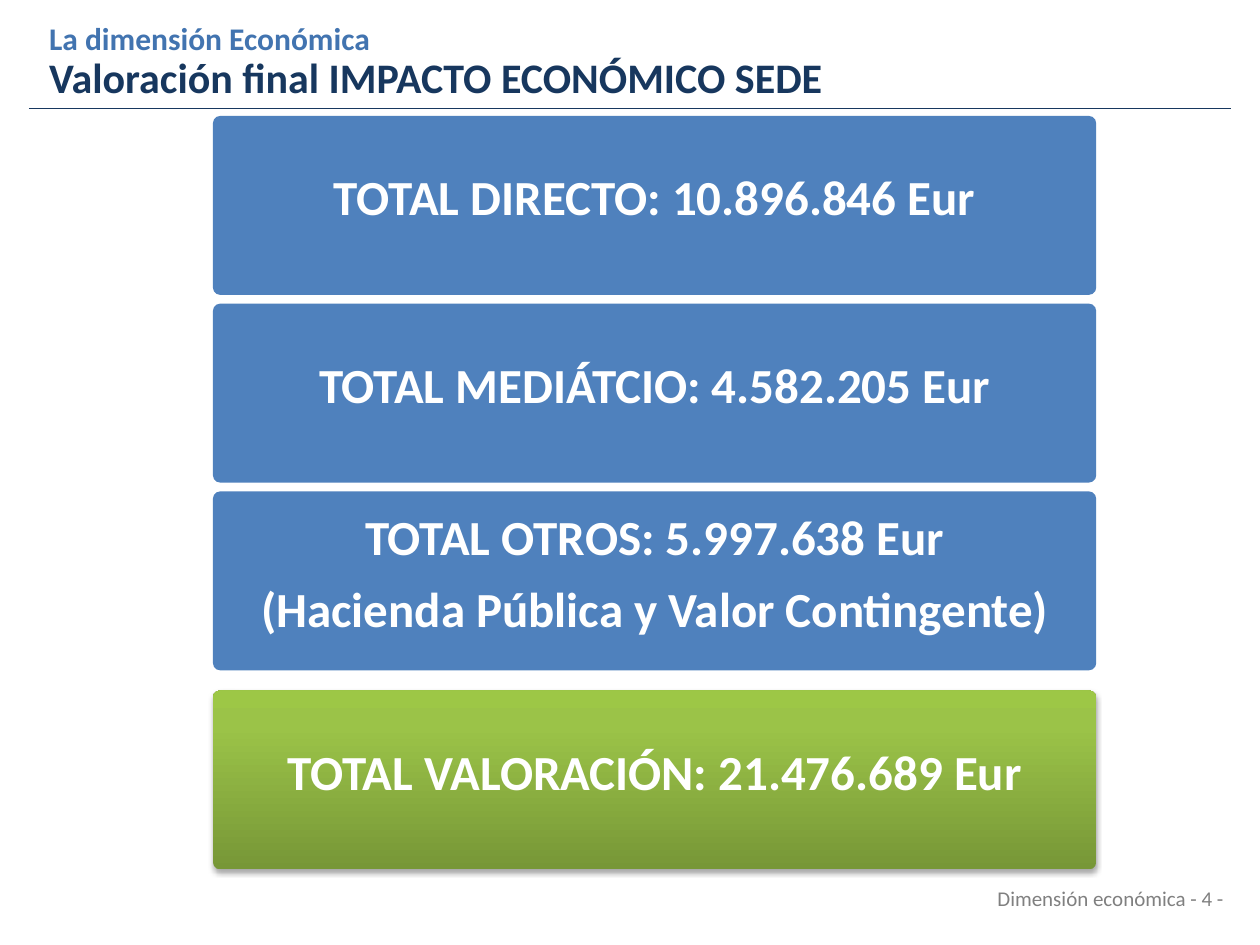
from dataclasses import dataclass

from lxml import etree
from pptx import Presentation
from pptx.dml.color import RGBColor
from pptx.enum import shapes, text
from pptx.oxml import ns
from pptx.util import Inches, Pt


@dataclass(frozen=True)
class Theme:
    font: str = "Calibri"
    blue: str = "4F81BD"
    subtitle: str = "4274B0"
    navy: str = "17375E"
    gray: str = "808080"
    white: str = "FFFFFF"
    shadow: str = "000000"
    green_stops: tuple = ((0, "779737"), (80, "9BC348"), (100, "9DC746"))
    subtitle_size: int = 18
    title_size: int = 24
    total_size: int = 28
    footer_size: int = 12


@dataclass(frozen=True)
class Total:
    lines: tuple[str, ...]
    is_final: bool = False


THEME = Theme()
TOTALS = (
    Total(("TOTAL DIRECTO: 10.896.846 Eur",)),
    Total(("TOTAL MEDIÁTCIO: 4.582.205 Eur",)),
    Total(("TOTAL OTROS: 5.997.638 Eur", "(Hacienda Pública y Valor Contingente)")),
    Total(("TOTAL VALORACIÓN: 21.476.689 Eur",), is_final=True),
)
BOX_LEFT, BOX_TOP, BOX_WIDTH, BOX_HEIGHT = 1.69, 0.92, 7.01, 1.42
BOX_PITCH, FINAL_GAP = 1.49, 0.09


def style_font(font, size: int, color: str, bold: bool = False) -> None:
    font.name = THEME.font
    font.size = Pt(size)
    font.bold = bold
    font.color.rgb = RGBColor.from_string(color)


def add_element(parent, tag: str, **attributes):
    values = {name: str(value) for name, value in attributes.items()}
    return etree.SubElement(parent, ns.qn(tag), values)


def add_gradient(shape) -> None:
    shape.fill.gradient()
    shape.fill.gradient_angle = 90
    stop_list = shape._element.spPr.find(".//" + ns.qn("a:gsLst"))
    for stop in list(stop_list):
        stop_list.remove(stop)
    for position, color in THEME.green_stops:
        stop = add_element(stop_list, "a:gs", pos=position * 1000)
        add_element(stop, "a:srgbClr", val=color)


def add_shadow(shape) -> None:
    effects = shape._element.spPr.find(ns.qn("a:effectLst"))
    shadow = add_element(effects, "a:outerShdw", blurRad=Pt(3.1), dist=Pt(1.8),
                         dir=90 * 60000, rotWithShape=0)
    color = add_element(shadow, "a:srgbClr", val=THEME.shadow)
    add_element(color, "a:alpha", val=35000)


def add_title(slide) -> None:
    title = slide.shapes.title
    title.left, title.top = Inches(0.39), Inches(0.18)
    title.width, title.height = Inches(9.06), Inches(0.64)
    frame = title.text_frame
    frame.margin_left = frame.margin_top = frame.margin_right = frame.margin_bottom = 0
    frame.vertical_anchor = text.MSO_ANCHOR.MIDDLE
    frame.auto_size = text.MSO_AUTO_SIZE.NONE
    paragraph = frame.paragraphs[0]
    paragraph.alignment = text.PP_ALIGN.LEFT
    paragraph.line_spacing = 0.9
    subtitle = paragraph.add_run()
    subtitle.text = "La dimensión Económica"
    style_font(subtitle.font, THEME.subtitle_size, THEME.subtitle, bold=True)
    paragraph.add_line_break()
    heading = paragraph.add_run()
    heading.text = "Valoración final IMPACTO ECONÓMICO SEDE"
    style_font(heading.font, THEME.title_size, THEME.navy, bold=True)


def add_rule(slide) -> None:
    rule = slide.shapes.add_connector(shapes.MSO_CONNECTOR.STRAIGHT, Inches(0.23),
                                      Inches(0.86), Inches(9.77), Inches(0.86))
    rule.line.color.rgb = RGBColor.from_string(THEME.navy)
    rule.line.width = Pt(0.75)
    add_element(rule._element.spPr, "a:effectLst")


def add_total(slide, total: Total, top: float) -> None:
    shape = slide.shapes.add_shape(shapes.MSO_SHAPE.ROUNDED_RECTANGLE, Inches(BOX_LEFT),
                                   Inches(top), Inches(BOX_WIDTH), Inches(BOX_HEIGHT))
    shape.adjustments[0] = 0.04
    shape.line.fill.background()
    shape.shadow.inherit = False
    if total.is_final:
        add_gradient(shape)
        add_shadow(shape)
    else:
        shape.fill.solid()
        shape.fill.fore_color.rgb = RGBColor.from_string(THEME.blue)
    frame = shape.text_frame
    frame.word_wrap = True
    frame.vertical_anchor = text.MSO_ANCHOR.MIDDLE
    for index, line in enumerate(total.lines):
        paragraph = frame.add_paragraph() if index else frame.paragraphs[0]
        paragraph.text = line
        paragraph.alignment = text.PP_ALIGN.CENTER
        paragraph.line_spacing = 0.6
        paragraph.space_before = Pt(20.5 if index else 0)
        style_font(paragraph.font, THEME.total_size, THEME.white, bold=True)


def add_footer(slide) -> None:
    footer = slide.shapes.add_textbox(Inches(6.5), Inches(6.98), Inches(3.31), Inches(0.3))
    footer.text_frame.word_wrap = True
    paragraph = footer.text_frame.paragraphs[0]
    paragraph.text = "Dimensión económica - 4 -"
    paragraph.alignment = text.PP_ALIGN.RIGHT
    style_font(paragraph.font, THEME.footer_size, THEME.gray)


def main() -> None:
    presentation = Presentation()
    presentation.slide_width, presentation.slide_height = Inches(10), Inches(7.5)
    slide = presentation.slides.add_slide(presentation.slide_layouts[5])
    add_footer(slide)
    add_title(slide)
    add_rule(slide)
    for index, total in enumerate(TOTALS):
        gap = FINAL_GAP if total.is_final else 0
        add_total(slide, total, BOX_TOP + index * BOX_PITCH + gap)
    presentation.save("out.pptx")


if __name__ == "__main__":
    main()
